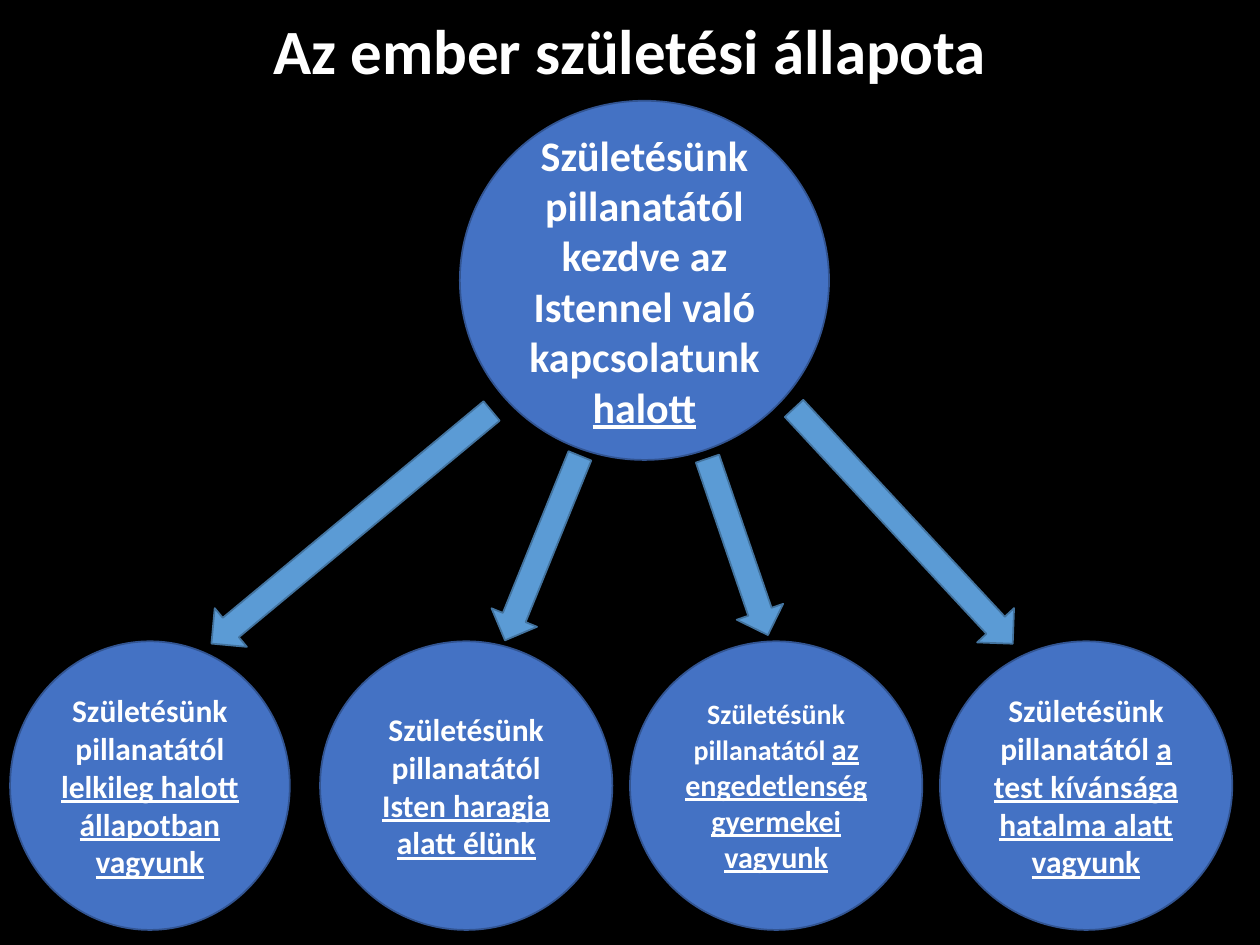
from typing import NamedTuple

from pptx import Presentation
from pptx.dml.color import RGBColor
from pptx.enum.shapes import MSO_SHAPE
from pptx.enum.text import MSO_ANCHOR, PP_ALIGN
from pptx.util import Inches, Pt

COLORS = {
    "back": "000000",
    "text": "FFFFFF",
    "disc": "4472C4",
    "rim": "325491",
    "arrow": "5B9BD5",
    "edge": "43739E",
}
FONT = "Calibri"
START = "Születésünk pillanatától "
ROW_TOP, ROW_HIGH, STEP = 5.09, 2.29, 2.46


class Disc(NamedTuple):
    left: float
    top: float
    width: float
    height: float
    plain: str
    marked: str
    size: float
    marked_size: float


class Arrow(NamedTuple):
    left: float
    top: float
    width: float
    height: float
    turn: float


def row_disc(place: int, marked: str, width: float = 2.32,
             size: float = 18, marked_size: float = 18) -> Disc:
    return Disc(0.08 + place * STEP, ROW_TOP, width, ROW_HIGH,
                START, marked, size, marked_size)


DISCS = [
    Disc(3.65, 0.8, 2.93, 2.85,
         START + "kezdve az Istennel való kapcsolatunk ", "halott", 24, 24),
    row_disc(0, "lelkileg halott állapotban vagyunk", width=2.22),
    row_disc(1, "Isten haragja alatt élünk"),
    row_disc(2, "az engedetlenség gyermekei vagyunk", size=16, marked_size=17.2),
    row_disc(3, "a test kívánsága hatalma alatt vagyunk"),
]
ARROWS = [
    Arrow(2.59, 2.74, 0.4, 2.89, 50.3),
    Arrow(4.11, 3.56, 0.39, 1.58, 22.1),
    Arrow(5.66, 3.6, 0.39, 1.48, 341.1),
    Arrow(6.97, 2.9, 0.4, 2.55, 317.1),
]


def color(name: str) -> RGBColor:
    return RGBColor.from_string(COLORS[name])


def style_text(para) -> None:
    para.alignment = PP_ALIGN.CENTER
    para.font.name = FONT
    para.font.bold = True
    para.font.color.rgb = color("text")


def add_shape(slide, kind, item: Disc | Arrow, fill: str, line: str):
    shape = slide.shapes.add_shape(
        kind, Inches(item.left), Inches(item.top),
        Inches(item.width), Inches(item.height))
    shape.shadow.inherit = False
    shape.fill.solid()
    shape.fill.fore_color.rgb = color(fill)
    shape.line.color.rgb = color(line)
    shape.line.width = Pt(1)
    return shape


def add_title(slide, text: str) -> None:
    box = slide.shapes.add_textbox(
        Inches(0), Inches(0.11), Inches(10), Inches(1.36))
    box.text_frame.word_wrap = True
    para = box.text_frame.paragraphs[0]
    para.text = text
    para.line_spacing = 0.9
    style_text(para)
    para.font.size = Pt(36)


def add_disc(slide, disc: Disc) -> None:
    frame = add_shape(slide, MSO_SHAPE.OVAL, disc, "disc", "rim").text_frame
    frame.word_wrap = True
    frame.vertical_anchor = MSO_ANCHOR.MIDDLE
    frame.margin_left = frame.margin_right = Inches(0.07)
    frame.margin_top = frame.margin_bottom = Inches(0.04)
    para = frame.paragraphs[0]
    style_text(para)
    para.font.size = Pt(disc.size)
    para.add_run().text = disc.plain
    run = para.add_run()
    run.text = disc.marked
    run.font.underline = True
    if disc.marked_size != disc.size:
        run.font.size = Pt(disc.marked_size)


def add_arrow(slide, arrow: Arrow) -> None:
    shape = add_shape(slide, MSO_SHAPE.DOWN_ARROW, arrow, "arrow", "edge")
    shape.rotation = arrow.turn


def main() -> None:
    deck = Presentation()
    deck.slide_width, deck.slide_height = Inches(10), Inches(7.5)
    slide = deck.slides.add_slide(deck.slide_layouts[6])
    slide.background.fill.solid()
    slide.background.fill.fore_color.rgb = color("back")
    add_title(slide, "Az ember születési állapota")
    for disc in DISCS:
        add_disc(slide, disc)
    for arrow in ARROWS:
        add_arrow(slide, arrow)
    deck.save("out.pptx")


if __name__ == "__main__":
    main()
